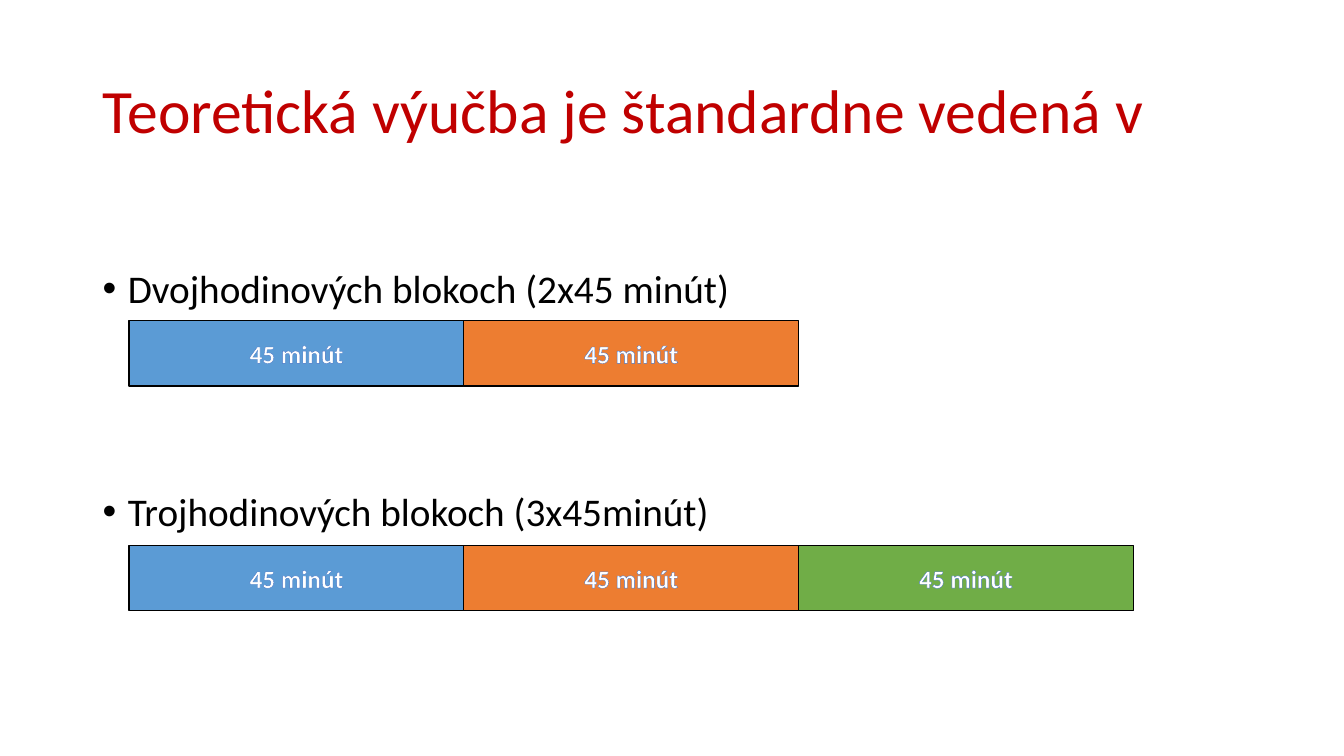
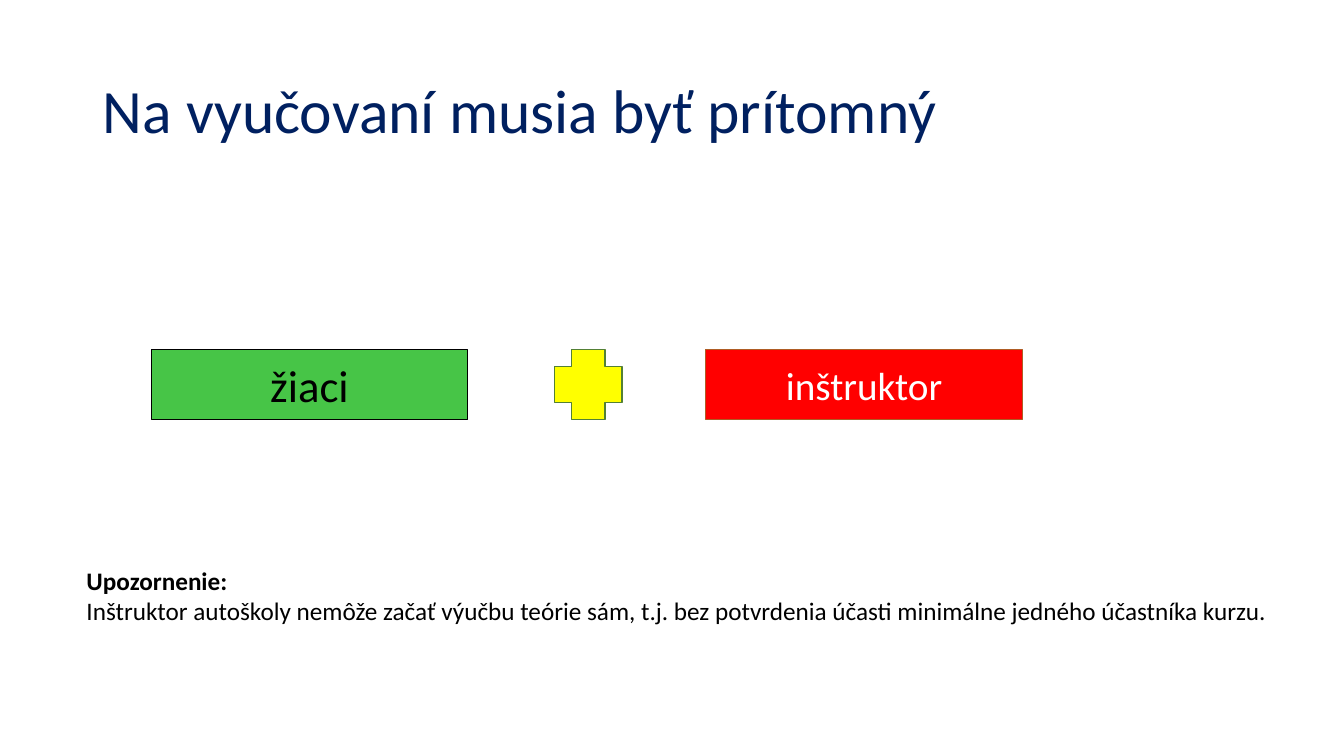
"""Build two slides on how driving theory lessons are organised."""
from dataclasses import dataclass

from lxml.etree import SubElement
from pptx import Presentation
from pptx.dml.color import RGBColor
from pptx.enum.shapes import MSO_SHAPE
from pptx.enum.text import MSO_ANCHOR, MSO_AUTO_SIZE, PP_ALIGN
from pptx.oxml.ns import qn
from pptx.util import Inches, Pt

FONT = "Calibri"
HUES = {
    "black": "000000", "white": "FFFFFF", "crimson": "C00000", "navy": "002060",
    "blue": "5B9BD5", "orange": "ED7D31", "green": "70AD47", "edge": "4472C4",
    "lime": "47C547", "red": "FF0000", "rust": "AF5C24",
    "yellow": "FFFF00", "moss": "538035",
}
LEFT, WIDE = 0.92, 11.5
BAR_X, BAR_W, BAR_H = 1.28, 3.32, 0.65
ROW_Y, ROW_H = 3.47, 0.69


@dataclass(frozen=True)
class Box:
    """A filled shape with an optional label."""
    x: float
    y: float
    w: float
    h: float
    fill: str
    line: str = "black"
    text: str = ""
    size: int = 18
    hue: str = "white"
    bold: bool = False
    edge: str = ""
    kind: MSO_SHAPE = MSO_SHAPE.RECTANGLE


@dataclass(frozen=True)
class Row:
    """A row of lesson bars."""
    y: float
    fills: tuple[str, ...]


def color(name: str) -> RGBColor:
    """Look up a colour by name."""
    return RGBColor.from_string(HUES[name])


def write(para, text: str, *, size: int, hue: str = "black", bold: bool = False,
          align=PP_ALIGN.LEFT, edge: str = "", bullet: bool = False,
          before: float = 0, lead: float = 1.0) -> None:
    """Fill a paragraph with formatted text."""
    if bullet:
        props = para._p.get_or_add_pPr()
        props.set("marL", str(Inches(0.25)))
        props.set("indent", str(-Inches(0.25)))
        SubElement(props, qn("a:buFont"), typeface="Arial")
        SubElement(props, qn("a:buChar"), char="•")
    para.alignment = align
    para.space_before = Pt(before)
    para.line_spacing = lead
    run = para.add_run()
    run.text = text
    font = run.font
    font.name, font.size, font.bold = FONT, Pt(size), bold
    font.color.rgb = color(hue)
    if edge:
        props = run._r.get_or_add_rPr()
        line = SubElement(props, qn("a:ln"), w=str(Pt(0.8)))
        fill = SubElement(line, qn("a:solidFill"))
        SubElement(fill, qn("a:srgbClr"), val=HUES[edge])
        props.insert(0, line)


def add_slide(deck, text: str, hue: str):
    """Add a slide with a left-aligned title."""
    slide = deck.slides.add_slide(deck.slide_layouts[5])
    title = slide.shapes.title
    title.left, title.top = Inches(LEFT), Inches(0.4)
    title.width, title.height = Inches(WIDE), Inches(1.45)
    frame = title.text_frame
    frame.auto_size = MSO_AUTO_SIZE.NONE
    frame.vertical_anchor = MSO_ANCHOR.MIDDLE
    write(frame.paragraphs[0], text, size=44, hue=hue, lead=0.9)
    return slide


def add_text(slide, x: float, y: float, w: float, h: float):
    """Add a wrapping text box and return its frame."""
    frame = slide.shapes.add_textbox(
        Inches(x), Inches(y), Inches(w), Inches(h)).text_frame
    frame.word_wrap = True
    return frame


def draw(slide, box: Box) -> None:
    """Draw a box with its label."""
    shape = slide.shapes.add_shape(
        box.kind, Inches(box.x), Inches(box.y), Inches(box.w), Inches(box.h))
    shape.shadow.inherit = False
    shape.fill.solid()
    shape.fill.fore_color.rgb = color(box.fill)
    shape.line.color.rgb = color(box.line)
    shape.line.width = Pt(1)
    if box.text:
        frame = shape.text_frame
        frame.vertical_anchor = MSO_ANCHOR.MIDDLE
        write(frame.paragraphs[0], box.text, size=box.size, hue=box.hue,
              bold=box.bold, align=PP_ALIGN.CENTER, edge=box.edge)


def add_blocks(deck) -> None:
    """Add the slide on lesson blocks."""
    slide = add_slide(deck, "Teoretická výučba je štandardne vedená v", "crimson")
    frame = add_text(slide, LEFT, 2.57, WIDE, 2.8)
    write(frame.paragraphs[0], "Dvojhodinových blokoch (2x45 minút)",
          size=28, bullet=True)
    write(frame.add_paragraph(), "Trojhodinových blokoch (3x45minút)",
          size=28, bullet=True, before=126)
    rows = (Row(3.18, ("blue", "orange")),
            Row(5.41, ("blue", "orange", "green")))
    for row in rows:
        for i, fill in enumerate(row.fills):
            draw(slide, Box(BAR_X + i * BAR_W, row.y, BAR_W, BAR_H, fill,
                            text="45 minút", bold=True, edge="edge"))


def add_people(deck) -> None:
    """Add the slide on who must be present."""
    slide = add_slide(deck, "Na vyučovaní musia byť prítomný", "navy")
    boxes = (
        Box(1.5, ROW_Y, 3.14, ROW_H, "lime", text="žiaci", size=32, hue="black"),
        Box(7, ROW_Y, 3.14, ROW_H, "red", "rust", "inštruktor", 28),
        Box(5.5, ROW_Y, 0.67, ROW_H, "yellow", "moss", kind=MSO_SHAPE.CROSS),
    )
    for box in boxes:
        draw(slide, box)
    frame = add_text(slide, 0.76, 5.56, 11.97, 0.71)
    frame.auto_size = MSO_AUTO_SIZE.SHAPE_TO_FIT_TEXT
    write(frame.paragraphs[0], "Upozornenie:", size=18, bold=True)
    write(frame.add_paragraph(),
          "Inštruktor autoškoly nemôže začať výučbu teórie sám, t.j. bez "
          "potvrdenia účasti minimálne jedného účastníka kurzu.", size=18)


def main() -> None:
    """Build and save the deck."""
    deck = Presentation()
    deck.slide_width, deck.slide_height = Inches(13.33), Inches(7.5)
    add_blocks(deck)
    add_people(deck)
    deck.save("out.pptx")


if __name__ == "__main__":
    main()
